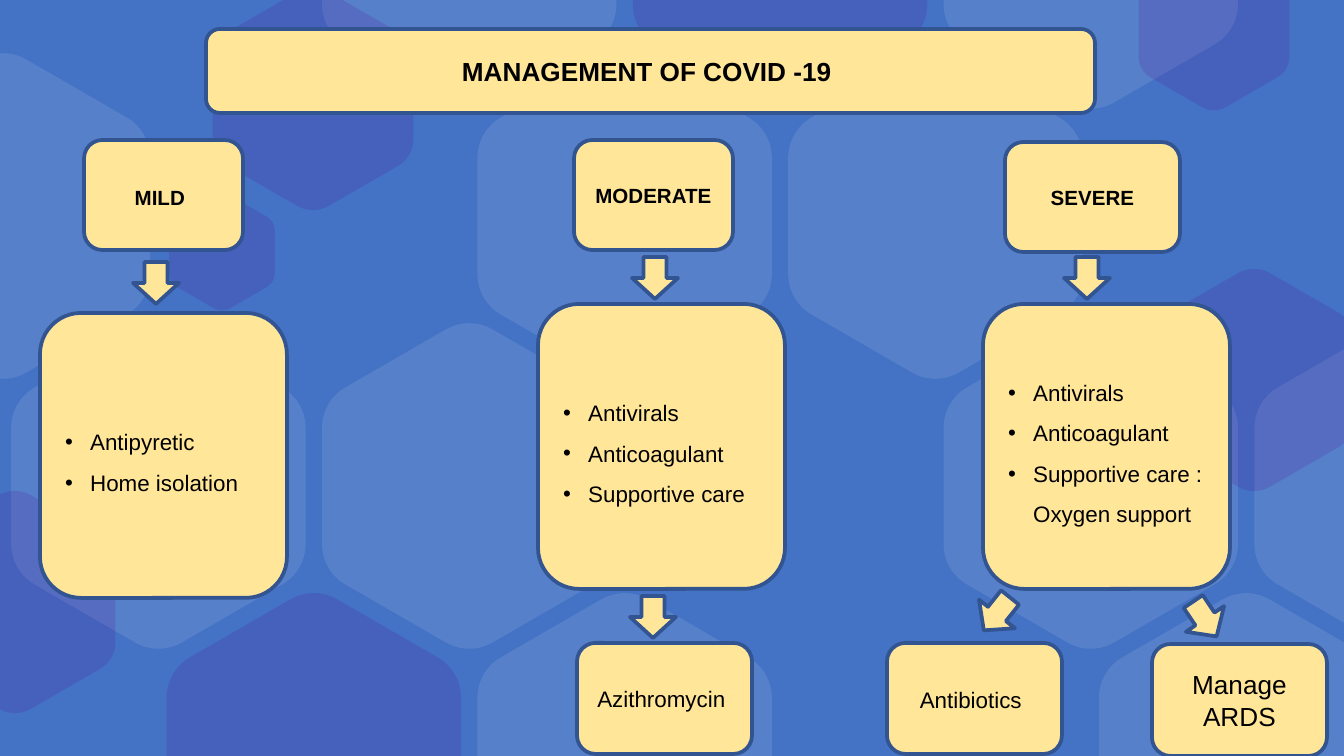
from math import cos, radians, sin
from lxml.etree import SubElement
from pptx import Presentation
from pptx.dml.color import RGBColor
from pptx.enum.shapes import MSO_SHAPE
from pptx.enum.text import MSO_ANCHOR, PP_ALIGN
from pptx.oxml.ns import qn
from pptx.util import Pt

SCALE = 914400 / 134.4  # EMU in one px
WIDE, HIGH = 1344, 756
BLUE = RGBColor(0x44, 0x72, 0xC4)
NAVY = RGBColor(0x32, 0x54, 0x91)
CREAM = RGBColor(0xFF, 0xE6, 0x99)
BLACK = RGBColor(0, 0, 0)
WHITE = RGBColor(0xFF, 0xFF, 0xFF)
PURPLE = RGBColor(0x4F, 0x00, 0x89)

# Background honeycomb: column, row, colour
COMB = [
    (5, 0, PURPLE), (7, 0, WHITE), (3, 0, WHITE),
    (2, 3, PURPLE), (4, 3, WHITE), (8, 3, WHITE),
    (1, 2, WHITE), (3, 2, WHITE), (7, 2, WHITE), (9, 2, WHITE),
    (0, 1, WHITE), (4, 1, WHITE), (6, 1, WHITE),
]
# Loose purple hexagons: centre x, centre y, radius
LOOSE = [(1254, 380, 116), (313, 99, 116), (15, 602, 116),
         (222, 252, 61), (1214, 27, 87)]

# Centred boxes: left, top, width, height, runs of (text, size, bold)
LABELS = [
    (206, 29, 889, 84, [("MANAGEMENT OF COVID -19 ", 14, True)]),
    (84, 140, 159, 110, [("MILD", 11, True), (" ", 14, False)]),
    (574, 140, 159, 110, [("MODERATE", 11, True)]),
    (1005, 142, 175, 110, [("SEVERE", 11, True)]),
    (577, 643, 175, 111, [("Azithromycin ", 12, False)]),
    (887, 643, 175, 111, [("Antibiotics", 12, False), (" ", 14, False)]),
    (1152, 644, 175, 112, [("Manage ARDS", 14, False)]),
]

# Treatment boxes: left, top, lines of (text, bulleted)
CARE = [
    (40, 313, [("Antipyretic", True), ("Home isolation", True)]),
    (538, 304, [("Antivirals", True), ("Anticoagulant", True),
                ("Supportive care", True)]),
    (983, 304, [("Antivirals", True), ("Anticoagulant", True),
                ("Supportive care :", True), ("Oxygen support", False)]),
]

# Arrows: left, top, turn
ARROWS = [(133, 262, 0), (1182, 598, 326.1), (974, 593, 38.6),
          (630, 596, 0), (632, 257, 0), (1064, 257, 0)]


def px(n):
    return round(n * SCALE)


def corners(cx, cy, r):
    """Four curve points per rounded corner, or one where the slide edge cuts."""
    tips = [(cx + r * cos(radians(a)), cy + r * sin(radians(a)))
            for a in range(30, 390, 60)]
    cut = cy - r < -50 or cy + r > HIGH + 50
    parts = []
    for i, (x, y) in enumerate(tips):
        if cut and not 0 <= y <= HIGH:
            if abs(x - cx) > 1:
                parts.append([(px(x), 0 if y < 0 else px(HIGH))])
            continue
        last, after = tips[i - 1], tips[(i + 1) % 6]
        parts.append([(px(x + (sx - x) * t), px(y + (sy - y) * t))
                      for (sx, sy), t in ((last, 0.16), (last, 0.06),
                                          (after, 0.06), (after, 0.16))])
    return parts


def add_hex(cx, cy, r, tint):
    parts = corners(cx, cy, r)
    first, *rest = [spot for part in parts for spot in part]
    draft = slide.shapes.build_freeform(*first, scale=1.0)
    draft.add_line_segments(rest, close=True)
    shape = draft.convert_to_shape()
    # Turn the three lines of each corner into one curve
    steps = list(next(shape._element.iter(qn("a:path"))))
    at = 0
    for part in parts:
        if len(part) == 4:
            curve, *more = steps[at + 1:at + 4]
            curve.tag = qn("a:cubicBezTo")
            for line in more:
                curve.append(line[0])
                line.getparent().remove(line)
        at += len(part)
    shape.shadow.inherit = False
    shape.fill.solid()
    shape.fill.fore_color.rgb = tint
    shape.line.fill.background()
    color = shape.fill._xPr.find(qn("a:solidFill"))[0]
    alpha = 10000 if tint == WHITE else 15000
    SubElement(color, qn("a:alpha"), val=str(alpha))


def add_box(kind, *place):
    shape = slide.shapes.add_shape(kind, *map(px, place))
    shape.shadow.inherit = False
    shape.fill.solid()
    shape.fill.fore_color.rgb = CREAM
    shape.line.color.rgb = NAVY
    shape.line.width = Pt(2)
    shape.text_frame.word_wrap = True
    shape.text_frame.vertical_anchor = MSO_ANCHOR.MIDDLE
    return shape


def add_run(para, text, size, bold=False):
    run = para.add_run()
    run.text = text
    font = run.font
    font.name, font.size, font.bold = "Arial", Pt(size), bold
    font.color.rgb = BLACK


def indent(para, bullet):
    props = para._p.get_or_add_pPr()
    props.set("marL", str(px(25)))
    props.set("indent", str(px(-25 if bullet else 0)))
    if bullet:
        color = SubElement(props, qn("a:buClr"))
        SubElement(color, qn("a:srgbClr"), val=str(BLACK))
        SubElement(props, qn("a:buFont"), typeface="Arial")
        SubElement(props, qn("a:buChar"), char="•")


deck = Presentation()
deck.slide_width, deck.slide_height = px(WIDE), px(HIGH)
slide = deck.slides.add_slide(deck.slide_layouts[6])
slide.background.fill.solid()
slide.background.fill.fore_color.rgb = BLUE

# Background
for col, row, tint in COMB:
    add_hex(3 + 155.4 * col, -54 + 270 * row, 170, tint)
for cx, cy, r in LOOSE:
    add_hex(cx, cy, r, PURPLE)

# Title, grades and last steps
for *place, runs in LABELS:
    para = add_box(MSO_SHAPE.ROUNDED_RECTANGLE, *place).text_frame.paragraphs[0]
    para.alignment = PP_ALIGN.CENTER
    for run in runs:
        add_run(para, *run)

# Treatment lists
for left, top, lines in CARE:
    frame = add_box(MSO_SHAPE.ROUNDED_RECTANGLE, left, top, 247, 285).text_frame
    for i, (text, bullet) in enumerate(lines):
        para = frame.add_paragraph() if i else frame.paragraphs[0]
        para.alignment = PP_ALIGN.LEFT
        para.line_spacing = 1.5
        indent(para, bullet)
        add_run(para, text, 12)

# Arrows
for left, top, turn in ARROWS:
    add_box(MSO_SHAPE.DOWN_ARROW, left, top, 46, 42).rotation = turn

deck.save("out.pptx")
